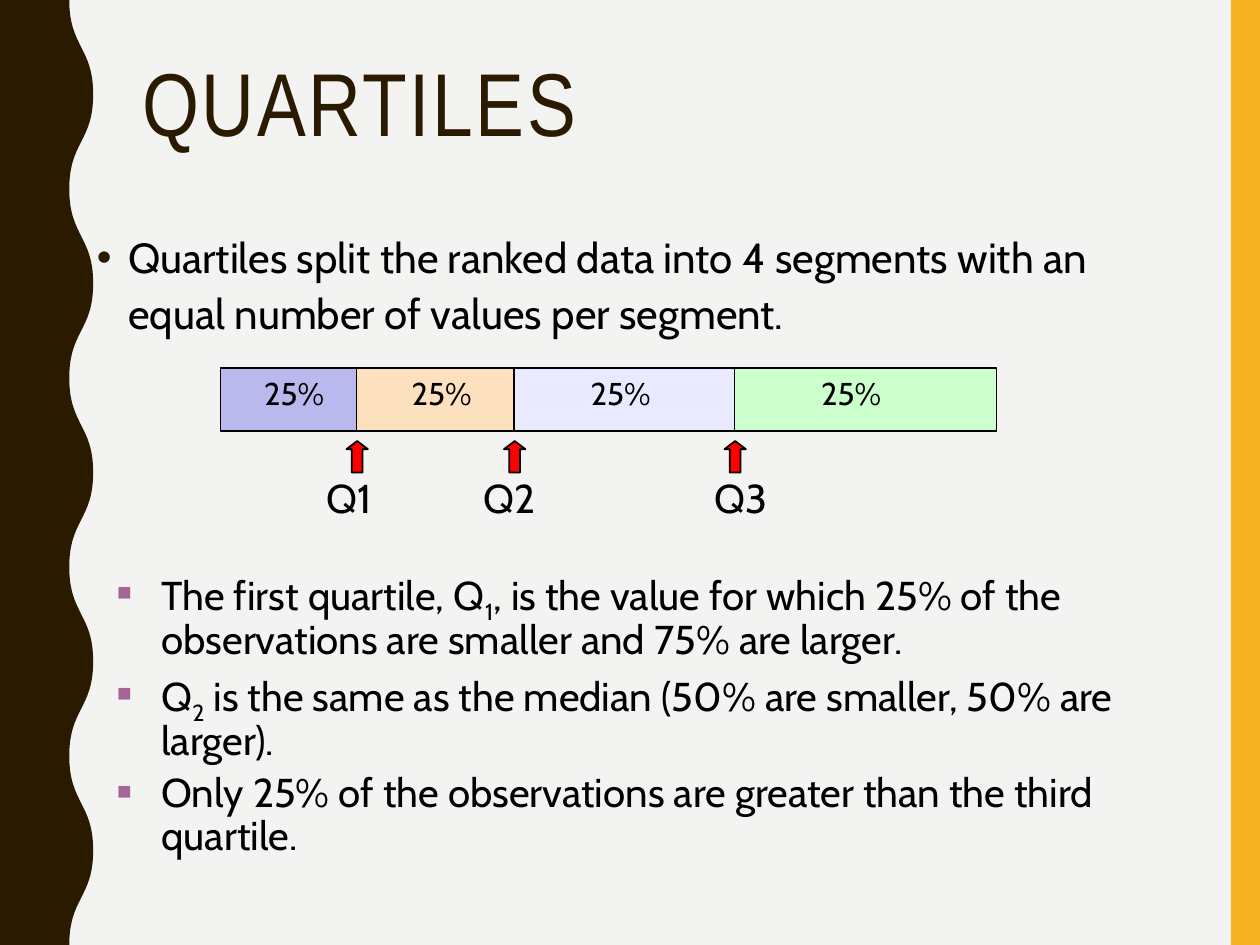
from lxml import etree
from pptx import Presentation
from pptx import util as u
from pptx.dml.color import RGBColor
from pptx.enum import shapes, text
from pptx.oxml import ns

SEGMENTS = [
    (1.75, 1.26, "B9B9ED", 1.83),
    (2.83, 1.25, "FDE0BD", 3),
    (4.08, 1.92, "E9E9FF", 4.42),
    (5.83, 2.08, "CCFFCC", 6.25),
]
QUARTILES = [("Q1", 2.71, 2.5), ("Q2", 3.96, 3.75), ("Q3", 5.71, 5.58)]
FACTS = [
    [("The first quartile, Q", 0), ("1", -25),
     (", is the value for which 25% of the observations are smaller and 75% are larger.", 0)],
    [("Q", 0), ("2", -25),
     (" is the same as the median (50% are smaller, 50% are larger).", 0)],
    [("Only 25% of the observations are greater than the third quartile.", 0)],
]


def color(value):
    """Turn a hex string into a colour."""
    return RGBColor.from_string(value)


def paint(shape, fill, line=None):
    """Set the fill and outline of a shape and drop its shadow."""
    shape.shadow.inherit = False
    shape.fill.solid()
    shape.fill.fore_color.rgb = color(fill)
    if line:
        shape.line.color.rgb = color(line)
        shape.line.width = u.Pt(1)
    else:
        shape.line.fill.background()


def add_block(page, kind, left, top, width, height, fill, line=None):
    """Add a painted preset shape."""
    shape = page.shapes.add_shape(
        kind, u.Inches(left), u.Inches(top), u.Inches(width), u.Inches(height))
    paint(shape, fill, line)
    return shape


def add_bullet(para, mark, fill, indent, size=100):
    """Give a paragraph a coloured bullet with a hanging indent."""
    props = para._p.get_or_add_pPr()
    props.set("marL", str(u.Inches(indent)))
    props.set("indent", str(-u.Inches(indent)))
    holder = etree.SubElement(props, ns.qn("a:buClr"))
    etree.SubElement(holder, ns.qn("a:srgbClr"), val=fill)
    etree.SubElement(props, ns.qn("a:buSzPct"), val=str(size * 1000))
    etree.SubElement(props, ns.qn("a:buFont"), typeface="Arial")
    etree.SubElement(props, ns.qn("a:buChar"), char=mark)


def add_text(page, paragraphs, left, top, width, height, size, font="Cabin", fill="000000",
             align=text.PP_ALIGN.LEFT, inset=0.1, leading=1.0, before=0, spacing=0, bullet=None):
    """Add a text box from paragraphs of (words, baseline shift) spans."""
    box = page.shapes.add_textbox(
        u.Inches(left), u.Inches(top), u.Inches(width), u.Inches(height))
    frame = box.text_frame
    frame.word_wrap = True
    frame.margin_left = frame.margin_right = u.Inches(inset)
    frame.margin_top = frame.margin_bottom = u.Inches(0.05)
    for index, spans in enumerate(paragraphs):
        para = frame.add_paragraph() if index else frame.paragraphs[0]
        para.alignment = align
        para.line_spacing = leading
        para.space_before = u.Pt(before)
        if bullet:
            add_bullet(para, *bullet)
        for words, shift in spans:
            span = para.add_run()
            span.text = words
            span.font.size = u.Pt(size)
            span.font.name = font
            span.font.color.rgb = color(fill)
            if shift:
                span.font._element.set("baseline", str(shift * 1000))
            if spacing:
                span.font._element.set("spc", str(int(spacing * 100)))
    return box


def bend(line, points):
    """Turn a straight outline segment into a cubic curve."""
    curve = etree.Element(ns.qn("a:cubicBezTo"))
    for x, y in points:
        etree.SubElement(curve, ns.qn("a:pt"), x=str(u.Inches(x)), y=str(u.Inches(y)))
    line.getparent().replace(line, curve)


def add_wave(page, inner=0.55, outer=0.74, step=0.75, height=7.5):
    """Add the dark left band with its wavy edge."""
    count = round(height / step)
    knots = [(outer if part % 2 else inner, part * step) for part in range(count + 1)]
    builder = page.shapes.build_freeform(u.Inches(inner), 0)
    builder.add_line_segments(
        [(u.Inches(x), u.Inches(y)) for x, y in [*knots[1:], (0, height), (0, 0)]])
    band = builder.convert_to_shape()
    lines = list(band._element.iter(ns.qn("a:lnTo")))
    for line, (x1, y1), (x2, y2) in zip(lines, knots, knots[1:]):
        middle = (y1 + y2) / 2
        bend(line, [(x1, middle), (x2, middle), (x2, y2)])
    paint(band, "2A1A00")


def add_segment_bar(page):
    """Add the four quarter segments and their labels."""
    for left, width, fill, _ in SEGMENTS:
        add_block(page, shapes.MSO_SHAPE.RECTANGLE, left, 2.92, width, 0.5, fill, "000000")
    for *_, left in SEGMENTS:
        add_text(page, [[("25%", 0)]], left, 2.92, 1.01, 0.5, 18, align=text.PP_ALIGN.CENTER)


def add_quartile_marks(page):
    """Add an upward arrow and a name at each quartile."""
    for name, arrow_left, name_left in QUARTILES:
        arrow = add_block(page, shapes.MSO_SHAPE.RIGHT_ARROW,
                          arrow_left, 3.54, 0.25, 0.17, "FF0000", "000000")
        arrow.rotation = 270
        arrow.adjustments[1] = 0.38
        add_text(page, [[(name, 0)]], name_left, 3.75, 0.67, 0.5, 23, inset=0.09, leading=0.9)


def main():
    """Build the quartiles slide."""
    deck = Presentation()
    deck.slide_width, deck.slide_height = u.Inches(10), u.Inches(7.5)
    page = deck.slides.add_slide(deck.slide_layouts[6])
    page.background.fill.solid()
    page.background.fill.fore_color.rgb = color("F3F3F2")
    add_block(page, shapes.MSO_SHAPE.RECTANGLE, 9.77, 0, 0.23, 7.5, "F8B323")
    add_wave(page)
    add_text(page, [[("QUARTILES", 0)]], 1.03, 0.42, 8.35, 1.63, 51,
             font="Arial Narrow", fill="2A1A00", leading=0.9, spacing=1.5)
    add_text(page, [[("Quartiles split the ranked data into 4 segments with an equal number "
                      "of values per segment.", 0)]], 0.67, 1.75, 8.17, 1.04, 24,
             leading=1.1, before=7, bullet=("•", "2A1A00", 0.25))
    add_segment_bar(page)
    add_quartile_marks(page)
    add_text(page, FACTS, 0.84, 4.48, 8.75, 2.42, 23, inset=0.09, leading=0.9,
             before=4.6, bullet=("■", "A46694", 0.35, 60))
    deck.save("out.pptx")


if __name__ == "__main__":
    main()
